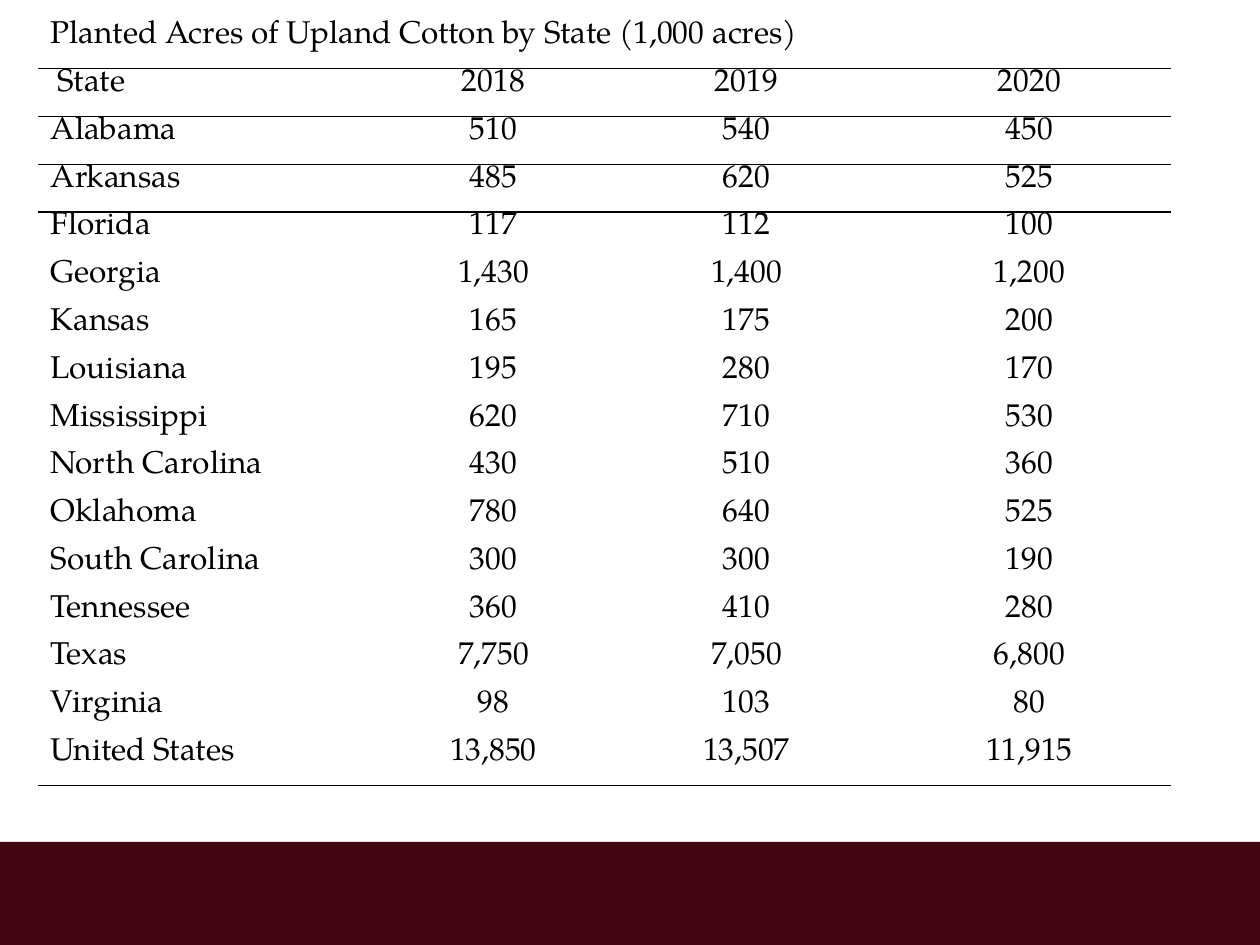
"""Build a slide with a table of planted cotton acres by state."""
from lxml.etree import SubElement
from pptx import Presentation
from pptx.dml.color import RGBColor
from pptx.enum.shapes import MSO_SHAPE
from pptx.enum.text import PP_ALIGN
from pptx.oxml.ns import qn
from pptx.util import Pt

PX = 914400 // 126
BLACK = RGBColor(0x00, 0x00, 0x00)
MAROON = RGBColor(0x41, 0x06, 0x11)
FONT = "TeX Gyre Pagella"
NO_STYLE = "{2D5ABB26-0587-4C30-8999-92F81FD0307C}"

TITLE = "Planted Acres of Upland Cotton by State (1,000 acres)"
ROWS = [
    (TITLE, "", "", ""),
    ("State", "2018", "2019", "2020"),
    ("Alabama", "510", "540", "450"),
    ("Arkansas", "485", "620", "525"),
    ("Florida", "117", "112", "100"),
    ("Georgia", "1,430", "1,400", "1,200"),
    ("Kansas", "165", "175", "200"),
    ("Louisiana", "195", "280", "170"),
    ("Mississippi", "620", "710", "530"),
    ("North Carolina", "430", "510", "360"),
    ("Oklahoma", "780", "640", "525"),
    ("South Carolina", "300", "300", "190"),
    ("Tennessee", "360", "410", "280"),
    ("Texas", "7,750", "7,050", "6,800"),
    ("Virginia", "98", "103", "80"),
    ("United States", "13,850", "13,507", "11,915"),
]
COLUMN_WIDTHS = [344, 223, 283, 283]
RULED_ROWS = {0, 1, 2, len(ROWS) - 1}


def add_rule(cell, side):
    line = SubElement(cell._tc.get_or_add_tcPr(), qn(f"a:{side}"), w=str(Pt(1)))
    fill = SubElement(line, qn("a:solidFill"))
    SubElement(fill, qn("a:srgbClr"), val=str(BLACK))


deck = Presentation()
deck.slide_width = 1260 * PX
deck.slide_height = 945 * PX
page = deck.slides.add_slide(deck.slide_layouts[6])

footer = page.shapes.add_shape(MSO_SHAPE.RECTANGLE, 0, 842 * PX, 1260 * PX, 103 * PX)
footer.shadow.inherit = False
footer.fill.solid()
footer.fill.fore_color.rgb = MAROON
footer.line.fill.background()

frame = page.shapes.add_table(
    len(ROWS), len(COLUMN_WIDTHS), 38 * PX, 21 * PX, sum(COLUMN_WIDTHS) * PX, 765 * PX
)
table = frame.table
table.first_row = False
table.horz_banding = False
table._tbl.tblPr.find(qn("a:tableStyleId")).text = NO_STYLE
for column, width in zip(table.columns, COLUMN_WIDTHS):
    column.width = width * PX
table.cell(0, 0).merge(table.cell(0, len(COLUMN_WIDTHS) - 1))

for row_index, values in enumerate(ROWS):
    for column_index, value in enumerate(values):
        cell = table.cell(row_index, column_index)
        cell.margin_top = cell.margin_bottom = 0
        if row_index - 1 in RULED_ROWS:
            add_rule(cell, "lnT")
        if row_index in RULED_ROWS:
            add_rule(cell, "lnB")
        cell.fill.background()
        para = cell.text_frame.paragraphs[0]
        para.text = value
        para.alignment = PP_ALIGN.CENTER if column_index else PP_ALIGN.LEFT
        para.font.name = FONT
        para.font.size = Pt(18)
        para.font.color.rgb = BLACK
table.cell(1, 0).margin_left = 20 * PX

deck.save("out.pptx")
